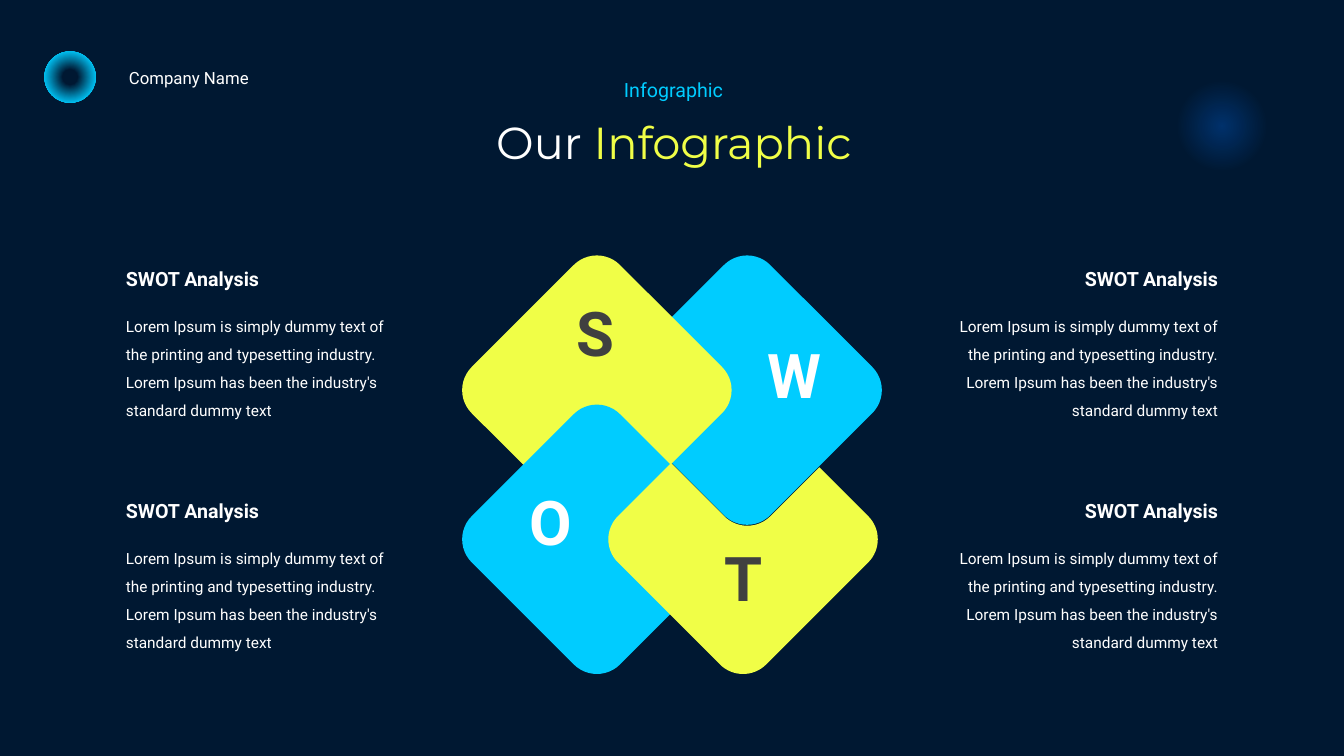
import math

import pptx
import pptx.dml.color
import pptx.enum.shapes
import pptx.enum.text
import pptx.oxml
import pptx.oxml.ns
import pptx.util

NIGHT, CYAN, YELLOW = "001832", "00CCFF", "F0FE47"
WHITE, GREY, BLUE = "FFFFFF", "404040", "00316B"
inch = pptx.util.Inches
align = pptx.enum.text.PP_ALIGN
preset = pptx.enum.shapes.MSO_SHAPE


def paint(shape, colour):
    shape.fill.solid()
    shape.fill.fore_color.rgb = pptx.dml.color.RGBColor.from_string(colour)
    shape.line.fill.background()
    shape.shadow.inherit = False


def write(parent, box, parts, size, side=align.LEFT, bold=False, font="Roboto", spacing=None):
    frame = parent.add_textbox(*map(inch, box)).text_frame
    frame.word_wrap = True
    frame.auto_size = pptx.enum.text.MSO_AUTO_SIZE.SHAPE_TO_FIT_TEXT
    paragraph = frame.paragraphs[0]
    paragraph.alignment = side
    paragraph.line_spacing = spacing
    for words, colour in parts:
        run = paragraph.add_run()
        run.text = words
        run.font.name = font
        run.font.size = pptx.util.Pt(size)
        run.font.bold = bold
        run.font.color.rgb = pptx.dml.color.RGBColor.from_string(colour)


deck = pptx.Presentation()
deck.slide_width, deck.slide_height = inch(13.33), inch(7.5)
slide = deck.slides.add_slide(deck.slide_layouts[6])
slide.background.fill.solid()
slide.background.fill.fore_color.rgb = pptx.dml.color.RGBColor.from_string(NIGHT)

# SWOT diamonds: rounded squares turned by 45 degrees
swot = slide.shapes.add_group_shape().shapes
SIDE, TURN, ROUNDING = 2.08, 315, 0.156
for left, top, colour in ((6.37, 2.83, CYAN), (4.88, 2.83, YELLOW), (4.88, 4.31, CYAN)):
    diamond = swot.add_shape(preset.ROUNDED_RECTANGLE, *map(inch, (left, top, SIDE, SIDE)))
    diamond.adjustments[0] = ROUNDING
    diamond.rotation = TURN
    paint(diamond, colour)

# Threat diamond: the same square with its top right quarter cut away
centre_x, centre_y = 7.37, 5.35
half, radius, notch = SIDE / 2, SIDE * ROUNDING, 0.03
inner = half - radius
outline = [(notch, -half)]
for x, y, start, sweep in (
    (notch + radius, notch - radius, 180, -90),
    (inner, inner, 0, 90),
    (-inner, inner, 90, 90),
    (-inner, -inner, 180, 90),
):
    if sweep > 0 and start == 0:
        outline.append((half, notch))
    for step in range(17):
        angle = math.radians(start + sweep * step / 16)
        outline.append((x + radius * math.cos(angle), y + radius * math.sin(angle)))
corners = [(inch(centre_x + x), inch(centre_y + y)) for x, y in outline]
builder = swot.build_freeform(*corners[0])
builder.add_line_segments(corners[1:], close=True)
threat = builder.convert_to_shape()
threat.rotation = TURN
paint(threat, YELLOW)

# SWOT letters
for letter, left, top, colour in (
    ("S", 5.23, 2.88, GREY),
    ("W", 7.2, 3.29, WHITE),
    ("O", 4.78, 4.75, WHITE),
    ("T", 6.7, 5.31, GREY),
):
    write(swot, (left, top, 1.36, 0.84), [(letter, colour)], 44, align.CENTER, bold=True)

# Four descriptions: two columns by two rows
DETAIL = ("Lorem Ipsum is simply dummy text of the printing and typesetting industry. "
          "Lorem Ipsum has been the industry's standard dummy text")
for side, detail_left, detail_width, heading_left, heading_width in (
    (align.LEFT, 1.15, 2.83, 1.15, 2.53),
    (align.RIGHT, 9.39, 2.79, 9.63, 2.55),
):
    for row in range(2):
        top = 2.6 + 2.3 * row
        write(slide.shapes, (detail_left, top + 0.41, detail_width, 1.18),
              [(DETAIL, WHITE)], 11, side, spacing=1.5)
        write(slide.shapes, (heading_left, top, heading_width, 0.34),
              [("SWOT Analysis", WHITE)], 14, side, bold=True)

# Company emblem and background glow, both with a radial gradient
for left, top, size, stops in (
    (0.44, 0.51, 0.51, ((1, NIGHT), (20, NIGHT), (75, CYAN))),
    (11.57, 0.7, 1.1, ((0, BLUE), (59, NIGHT))),
):
    glow = slide.shapes.add_shape(preset.OVAL, *map(inch, (left, top, size, size)))
    paint(glow, NIGHT)
    stop_list = "".join(
        f'<a:gs pos="{share * 1000}"><a:srgbClr val="{colour}"/></a:gs>' for share, colour in stops)
    gradient = pptx.oxml.parse_xml(
        f'<a:gradFill {pptx.oxml.ns.nsdecls("a")} rotWithShape="1"><a:gsLst>{stop_list}</a:gsLst>'
        '<a:path path="circle"><a:fillToRect l="50000" t="50000" r="50000" b="50000"/></a:path>'
        '</a:gradFill>')
    properties = glow.element.spPr
    properties.replace(properties.find(pptx.oxml.ns.qn("a:solidFill")), gradient)

# Header
write(slide.shapes, (1.18, 0.62, 1.8, 0.3), [("Company Name", WHITE)], 12)
write(slide.shapes, (3.65, 1.09, 6.07, 0.64), [("Our ", WHITE), ("Infographic", YELLOW)],
      32, align.CENTER, font="Montserrat")
write(slide.shapes, (5.72, 0.72, 1.92, 0.34), [("Infographic", CYAN)], 14, align.CENTER)

deck.save("out.pptx")
